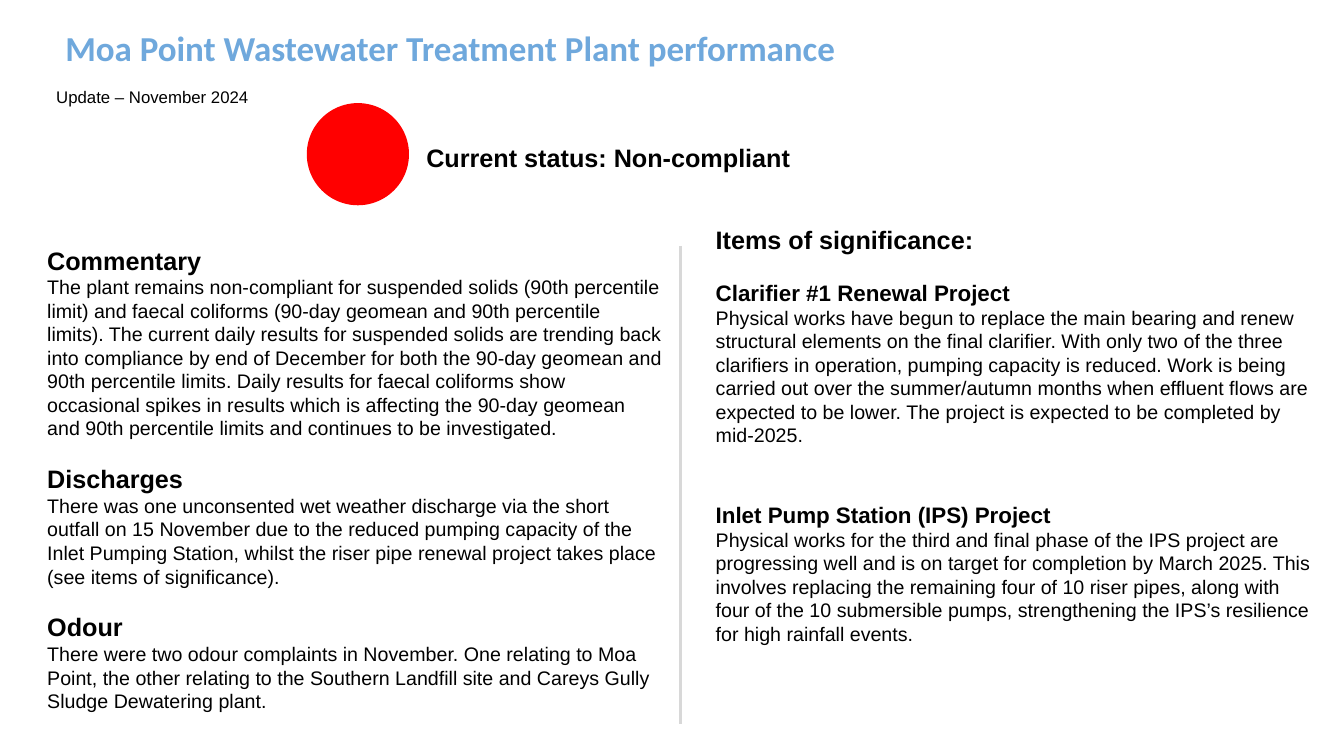
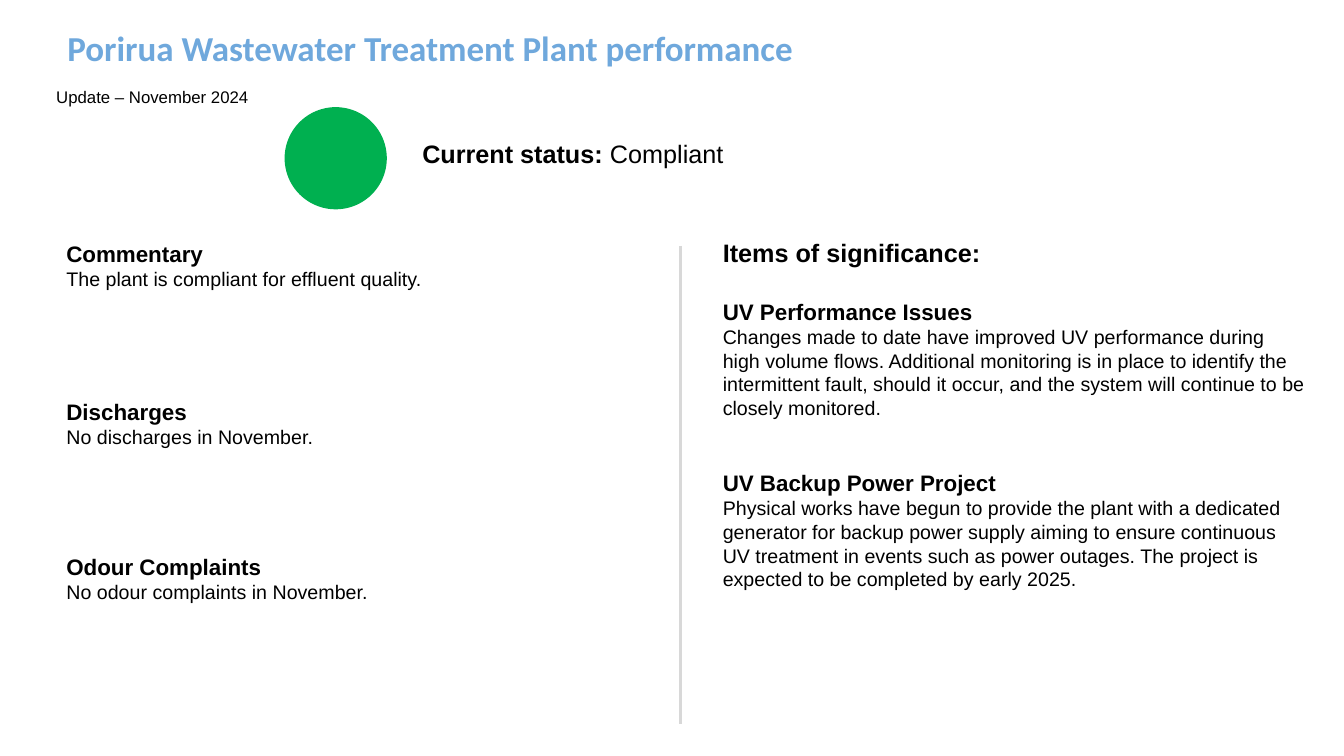
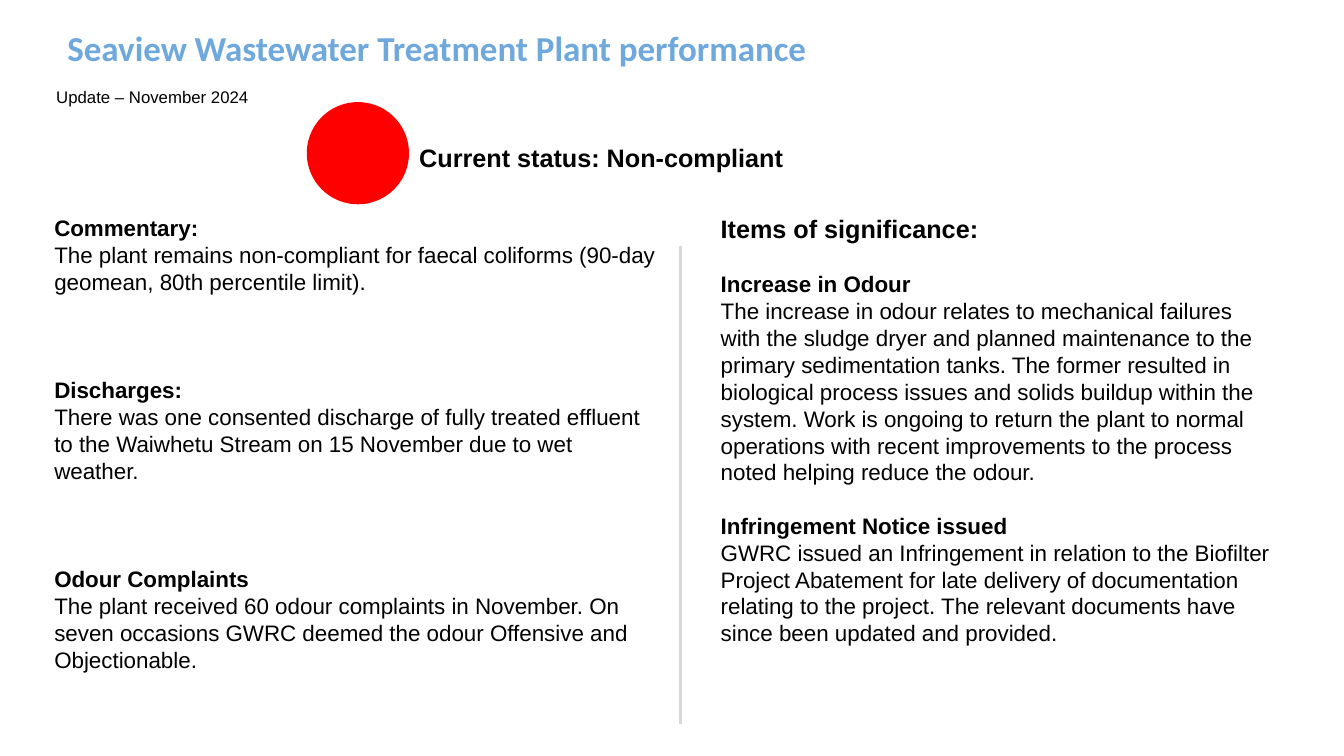
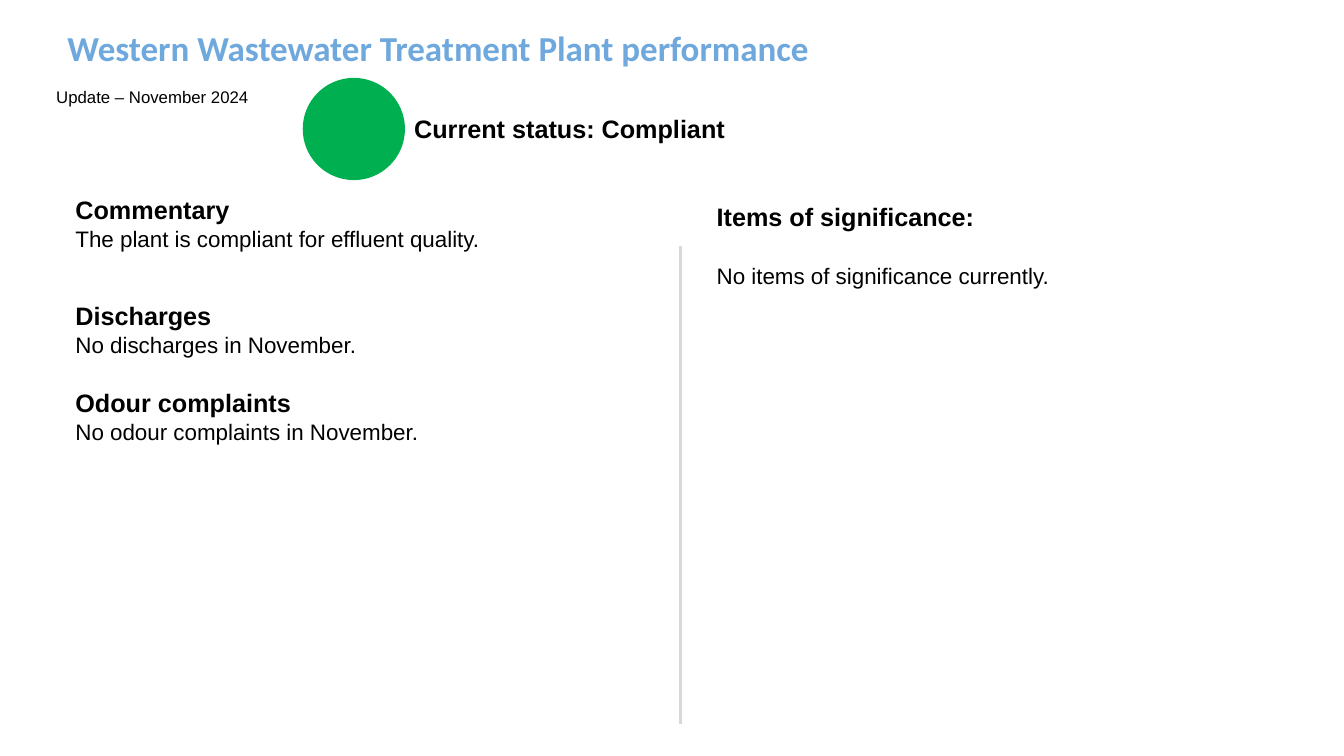
from dataclasses import dataclass

from pptx import Presentation
from pptx.dml.color import RGBColor
from pptx.enum.shapes import MSO_CONNECTOR, MSO_SHAPE
from pptx.oxml.ns import qn
from pptx.util import Inches, Pt

# Shared style
BLACK = RGBColor(0x00, 0x00, 0x00)
TITLE_BLUE = RGBColor(0x6F, 0xA8, 0xDC)
DIVIDER_GREY = RGBColor(0xD8, 0xD8, 0xD8)
RED = RGBColor(0xFF, 0x00, 0x00)
GREEN = RGBColor(0x00, 0xB0, 0x50)
BODY_FONT = "Arial"
TITLE_FONT = "Calibri"
LIGHT_SIZE = 1.0


@dataclass
class Section:
    """A heading with its text; gap is the space above, in points."""
    heading: str
    text: str = ""
    gap: float = 0
    heading_size: int = 16
    text_size: int = 14


def add_para(box, text, size, bold=False, gap=0, font=BODY_FONT, color=BLACK):
    frame = box.text_frame
    para = frame.paragraphs[0]
    if para.runs:
        para = frame.add_paragraph()
    para.add_run().text = text
    para.space_before = Pt(gap)
    para.font.name = font
    para.font.size = Pt(size)
    para.font.bold = bold
    para.font.color.rgb = color
    return para


def add_box(page, left, top, width, height):
    box = page.shapes.add_textbox(
        Inches(left), Inches(top), Inches(width), Inches(height))
    box.text_frame.word_wrap = True
    return box


def add_header(page, title, left):
    box = add_box(page, left, 0.16, 12.4, 0.62)
    box.text_frame.margin_top = box.text_frame.margin_bottom = Inches(0.1)
    add_para(box, title, 25, True, font=TITLE_FONT, color=TITLE_BLUE)
    update = add_box(page, 0.46, 0.81, 6.1, 0.3)
    add_para(update, "Update – November 2024", 12)


def add_divider(page):
    line = page.shapes.add_connector(
        MSO_CONNECTOR.STRAIGHT,
        Inches(6.75), Inches(2.44), Inches(6.75), Inches(7.18))
    line.line.color.rgb = DIVIDER_GREY
    line.line.width = Pt(2.25)
    properties = line._element.spPr
    properties.append(properties.makeelement(qn("a:effectLst"), {}))


def add_light(page, left, top, color):
    light = page.shapes.add_shape(
        MSO_SHAPE.FLOWCHART_CONNECTOR, Inches(left), Inches(top),
        Inches(LIGHT_SIZE), Inches(LIGHT_SIZE))
    light.shadow.inherit = False
    light.fill.solid()
    light.fill.fore_color.rgb = color
    light.line.color.rgb = color
    light.line.width = Pt(1)


def add_status(page, left, top, status, bold=True):
    box = add_box(page, left, top, 7.4, 0.4)
    para = add_para(box, "Current status: ", 18, True)
    span = para.add_run()
    span.text = status
    if not bold:
        span.font.bold = False


def add_sections(page, area, sections):
    box = add_box(page, *area)
    for section in sections:
        gap = section.gap
        if section.heading:
            add_para(box, section.heading, section.heading_size, True, gap)
            gap = 0
        if section.text:
            add_para(box, section.text, section.text_size, gap=gap)


def add_plant(deck, title, light, status, commentary, significance,
              title_left=0.57):
    page = deck.slides.add_slide(deck.slide_layouts[6])
    add_header(page, f"{title} Wastewater Treatment Plant performance",
               title_left)
    add_light(page, *light)
    add_status(page, *status)
    add_sections(page, *commentary)
    area, items = significance
    heading = Section("Items of significance:", heading_size=18)
    add_sections(page, area, [heading, *items])
    add_divider(page)


def add_moa_point(deck):
    commentary = [
        Section("Commentary", "The plant remains non-compliant for suspended solids (90th percentile limit) and faecal coliforms (90-day geomean and 90th percentile limits). The current daily results for suspended solids are trending back into compliance by end of December for both the 90-day geomean and 90th percentile limits. Daily results for faecal coliforms show occasional spikes in results which is affecting the 90-day geomean and 90th percentile limits and continues to be investigated.",
                heading_size=18),
        Section("Discharges", "There was one unconsented wet weather discharge via the short outfall on 15 November due to the reduced pumping capacity of the Inlet Pumping Station, whilst the riser pipe renewal project takes place (see items of significance).",
                17, heading_size=18),
        Section("Odour", "There were two odour complaints in November. One relating to Moa Point, the other relating to the Southern Landfill site and Careys Gully Sludge Dewatering plant.",
                17, heading_size=18),
    ]
    significance = [
        Section("Clarifier #1 Renewal Project", "Physical works have begun to replace the main bearing and renew structural elements on the final clarifier. With only two of the three clarifiers in operation, pumping capacity is reduced. Work is being carried out over the summer/autumn months when effluent flows are expected to be lower. The project is expected to be completed by mid-2025.",
                17),
        Section("Inlet Pump Station (IPS) Project", "Physical works for the third and final phase of the IPS project are progressing well and is on target for completion by March 2025. This involves replacing the remaining four of 10 riser pipes, along with four of the 10 submersible pumps, strengthening the IPS’s resilience for high rainfall events.",
                38.5),
    ]
    add_plant(deck, "Moa Point", (3.05, 1.03, RED),
              (4.13, 1.36, "Non-compliant"),
              ((0.37, 2.38, 6.3, 4.8), commentary),
              ((7, 2.18, 6.12, 4.81), significance), title_left=0.55)


def add_porirua(deck):
    commentary = [
        Section("Commentary", "The plant is compliant for effluent quality."),
        Section("Discharges", "No discharges in November.", 77),
        Section("Odour Complaints", "No odour complaints in November.", 75),
    ]
    significance = [
        Section("UV Performance Issues", "Changes made to date have improved UV performance during high volume flows. Additional monitoring is in place to identify the intermittent fault, should it occur, and the system will continue to be closely monitored.",
                21.5),
        Section("UV Backup Power Project", "Physical works have begun to provide the plant with a dedicated generator for backup power supply aiming to ensure continuous UV treatment in events such as power outages. The project is expected to be completed by early 2025.",
                36),
    ]
    add_plant(deck, "Porirua", (2.83, 1.07, GREEN),
              (4.09, 1.32, "Compliant", False),
              ((0.56, 2.33, 6.11, 4.75), commentary),
              ((7.07, 2.31, 5.98, 4.21), significance))


def add_seaview(deck):
    commentary = [
        Section("Commentary:", "The plant remains non-compliant for faecal coliforms (90-day geomean, 80th percentile limit).",
                text_size=16),
        Section("Discharges:", "There was one consented discharge of fully treated effluent to the Waiwhetu Stream on 15 November due to wet weather.",
                58, text_size=16),
        Section("Odour Complaints", "The plant received 60 odour complaints in November. On seven occasions GWRC deemed the odour Offensive and Objectionable.",
                58, text_size=16),
    ]
    significance = [
        Section("Increase in Odour", "The increase in odour relates to mechanical failures with the sludge dryer and planned maintenance to the primary sedimentation tanks. The former resulted in biological process issues and solids buildup within the system. Work is ongoing to return the plant to normal operations with recent improvements to the process noted helping reduce the odour.",
                19, text_size=16),
        Section("Infringement Notice issued", "GWRC issued an Infringement in relation to the Biofilter Project Abatement for late delivery of documentation relating to the project. The relevant documents have since been updated and provided.",
                19, text_size=16),
    ]
    add_plant(deck, "Seaview", (3.05, 1.02, RED),
              (4.06, 1.36, "Non-compliant"),
              ((0.44, 2.08, 6.23, 5.25), commentary),
              ((7.05, 2.07, 5.67, 5.25), significance))


def add_western(deck):
    commentary = [
        Section("Commentary", "The plant is compliant for effluent quality.",
                0, 18, 16),
        Section("Discharges", "No discharges in November.", 35, 18, 16),
        Section("Odour complaints", "No odour complaints in November.",
                21.5, 18, 16),
    ]
    significance = [
        Section("", "No items of significance currently.", 21.5, text_size=16),
    ]
    add_plant(deck, "Western", (3.01, 0.78, GREEN),
              (4.01, 1.08, "Compliant"),
              ((0.65, 1.88, 6, 3.45), commentary),
              ((7.01, 1.95, 5.67, 1.51), significance))


def main():
    deck = Presentation()
    deck.slide_width = Inches(13.33)
    deck.slide_height = Inches(7.5)
    add_moa_point(deck)
    add_porirua(deck)
    add_seaview(deck)
    add_western(deck)
    deck.save("out.pptx")


if __name__ == "__main__":
    main()
